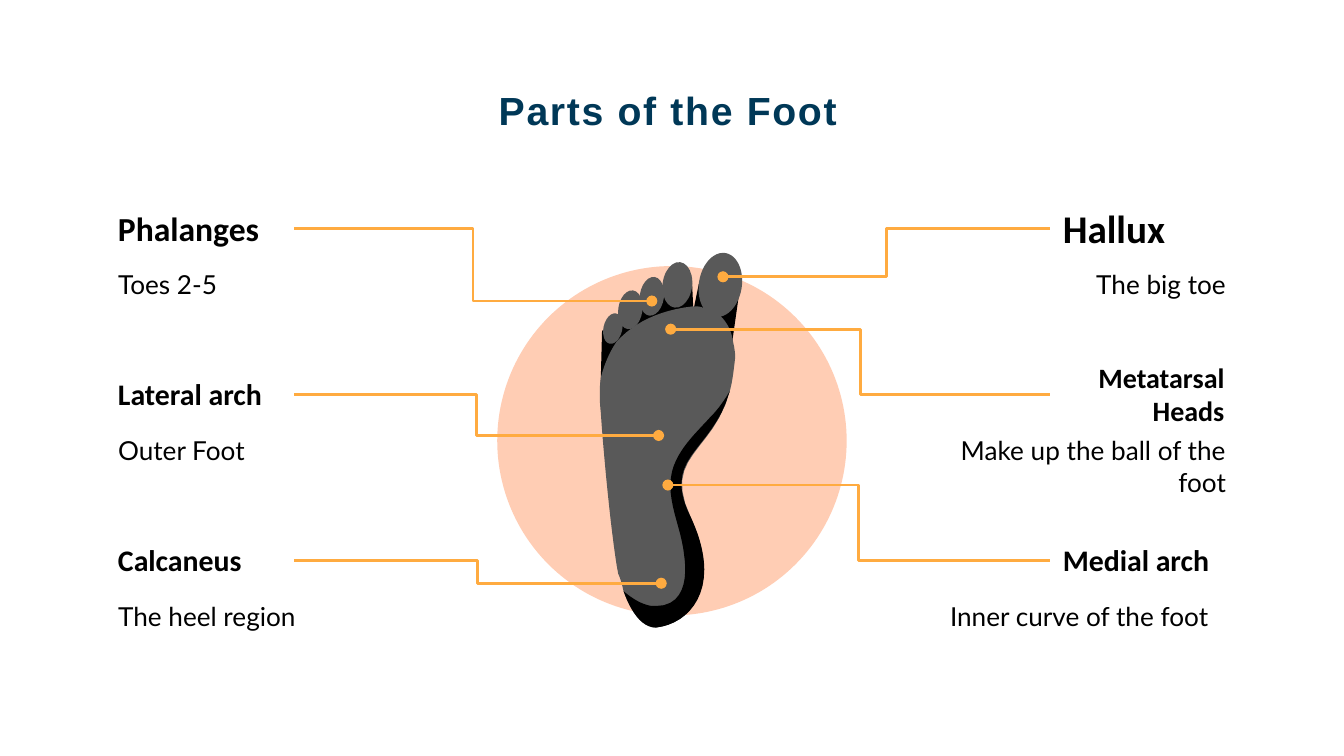
from lxml import etree
from pptx import Presentation
from pptx.dml.color import RGBColor
from pptx.enum.shapes import MSO_CONNECTOR, MSO_SHAPE
from pptx.enum.text import MSO_ANCHOR, MSO_AUTO_SIZE, PP_ALIGN
from pptx.oxml.ns import qn
from pptx.util import Pt

PX = 9144  # 100 px to the inch
WIDTH = 1000
HEIGHT = WIDTH * 9 / 16
ELBOW = MSO_CONNECTOR.ELBOW
OVAL = MSO_SHAPE.OVAL
TOP, MIDDLE = MSO_ANCHOR.TOP, MSO_ANCHOR.MIDDLE
LEFT, CENTER, RIGHT = PP_ALIGN.LEFT, PP_ALIGN.CENTER, PP_ALIGN.RIGHT
COLORS = {"title": "003857", "text": "000000", "disc": "FF9D6C",
          "skin": "595959", "shade": "000000", "line": "FFAB40"}

TITLE = "Parts of the Foot"
# name, size, align, detail, align, dot on the foot
LEFT_PARTS = [
    ("Phalanges", 18, LEFT, "Toes 2-5", LEFT, (485, 224)),
    ("Lateral arch", 16, LEFT, "Outer Foot", LEFT, (490, 324)),
    ("Calcaneus", 16, LEFT, "The heel region", LEFT, (492, 434)),
]
RIGHT_PARTS = [
    ("Hallux", 21, LEFT, "The big toe", RIGHT, (538, 206)),
    ("Metatarsal Heads", 15, RIGHT, "Make up the ball of the foot", RIGHT, (499, 245)),
    ("Medial arch", 16, LEFT, "Inner curve of the foot", LEFT, (497, 361)),
]
# left edges of name and detail, start of the line
SIDES = [(LEFT_PARTS, 78, 78, 219), (RIGHT_PARTS, 781, 697, 781)]
ROW_TOP, ROW_STEP = 149, 123.5

# Outlines: pairs are corners, sixes are Bezier curves
TOE_SHADES = [
    [(463, 243), (448, 246), (447, 284), (464, 262)],
    [(478, 225), (460, 235), (464, 265), (481, 245)],
    [(494, 217), (477, 225), (478, 257), (498, 239)],
    [(515, 211), (493, 212), (491, 249), (516, 233)],
    [(520, 211), (512, 250), (545, 253), (550, 218)],
]
SOLE = [
    (515, 228), (490, 231, 472, 240, 459, 254), (454, 261, 450, 270, 447, 281),
    (446, 289, 446, 297, 447, 307), (450, 350, 456, 407, 460, 427),
    (462, 431, 463, 436, 464, 440), (469, 454, 477, 467, 488, 467),
    (515, 464, 537, 435, 514, 385), (492, 339, 531, 337, 543, 291),
    (545, 284, 546, 275, 547, 266), (547, 261, 546, 257, 545, 252),
    (544, 246, 541, 240, 536, 235), (533, 232, 528, 230, 523, 229),
    (521, 228, 519, 228, 517, 228),
]
ARCH_SHADE = [
    (543, 291), (539, 298, 534, 305, 528, 311), (517, 323, 504, 335, 500, 351),
    (495, 372, 507, 392, 509, 413), (510, 420, 514, 451, 488, 451), (485, 451),
    (478, 450, 471, 446, 464, 440), (469, 454, 477, 467, 488, 467),
    (507, 465, 524, 450, 524, 424), (524, 413, 521, 400, 514, 385),
    (509, 375, 507, 367, 507, 360), (507, 336, 533, 327, 543, 291),
]
# left, top, width, height, tilt
TOES = [(520, 188, 32, 48, 9), (493, 195, 22, 34, 7), (476, 206, 18, 29, 8),
        (460, 216, 18, 29, 8), (449, 233, 14, 23, 12)]


def px(*vals):
    return [round(v * PX) for v in vals]


def rgb(key):
    return RGBColor.from_string(COLORS[key])


def paint(shape, key):
    shape.shadow.inherit = False
    shape.fill.solid()
    shape.fill.fore_color.rgb = rgb(key)
    shape.line.fill.background()


def oval(box, key, tilt=0):
    shape = slide.shapes.add_shape(OVAL, *px(*box))
    shape.rotation = tilt
    paint(shape, key)
    return shape


def trace(path, steps=12):
    """Turn corners and Bezier curves into a list of points."""
    pts = [path[0]]
    for seg in path[1:]:
        if len(seg) == 2:
            pts.append(seg)
            continue
        start = pts[-1]
        for i in range(1, steps + 1):
            t = i / steps
            u = 1 - t
            pts.append(tuple(
                u**3 * start[k] + 3 * u * u * t * seg[k]
                + 3 * u * t * t * seg[k + 2] + t**3 * seg[k + 4]
                for k in (0, 1)))
    return pts


def outline(path, key):
    pts = [px(*p) for p in trace(path)]
    form = slide.shapes.build_freeform(*pts[0], scale=1.0)
    form.add_line_segments(pts[1:], close=True)
    paint(form.convert_to_shape(), key)


def write(box, text, size, font, align, anchor=TOP, bold=False, key="text"):
    frame = box.text_frame
    frame.word_wrap = True
    frame.auto_size = MSO_AUTO_SIZE.NONE
    frame.vertical_anchor = anchor
    frame.margin_left = frame.margin_right = 10 * PX
    frame.margin_top = frame.margin_bottom = 10 * PX
    para = frame.paragraphs[0]
    para.alignment = align
    run = para.add_run()
    run.text = text
    run.font.size, run.font.name, run.font.bold = Pt(size), font, bold
    run.font.color.rgb = rgb(key)
    return para


def label(box, *args, **opts):
    write(slide.shapes.add_textbox(*px(*box)), *args, **opts)


def pointer(start, dot):
    line = slide.shapes.add_connector(ELBOW, *px(*start, *dot))
    line.line.color.rgb = rgb("line")
    line.line.width = Pt(1.5)
    etree.SubElement(line.line._get_or_add_ln(), qn("a:tailEnd"), type="oval")
    etree.SubElement(line._element.spPr, qn("a:effectLst"))


prs = Presentation()
prs.slide_width, prs.slide_height = px(WIDTH, HEIGHT)
slide = prs.slides.add_slide(prs.slide_layouts[5])

title = slide.shapes.title
title.left, title.top, title.width, title.height = px(38, 49, 918, 75)
para = write(title, TITLE, 21, "Arial", CENTER, bold=True, key="title")
para.line_spacing = 1.15
para.runs[0].font._element.set("spc", "90")

disc = oval((370, 198, 260, 260), "disc")
tint = disc.fill._xPr.find(".//" + qn("a:srgbClr"))
etree.SubElement(tint, qn("a:alpha"), val="51000")

for shade in TOE_SHADES:
    outline(shade, "shade")
outline(SOLE, "skin")
for *box, tilt in TOES:
    oval(box, "skin", tilt)
outline(ARCH_SHADE, "shade")

for parts, name_x, note_x, line_x in SIDES:
    for row, (name, size, side, note, note_side, dot) in enumerate(parts):
        y = ROW_TOP + row * ROW_STEP
        label((name_x, y, 140, 41), name, size, "Calibri", side, MIDDLE, True)
        label((note_x, y + 41, 225, 67), note, 14, "Lato", note_side)
        pointer((line_x, y + 21), dot)

prs.save("out.pptx")
